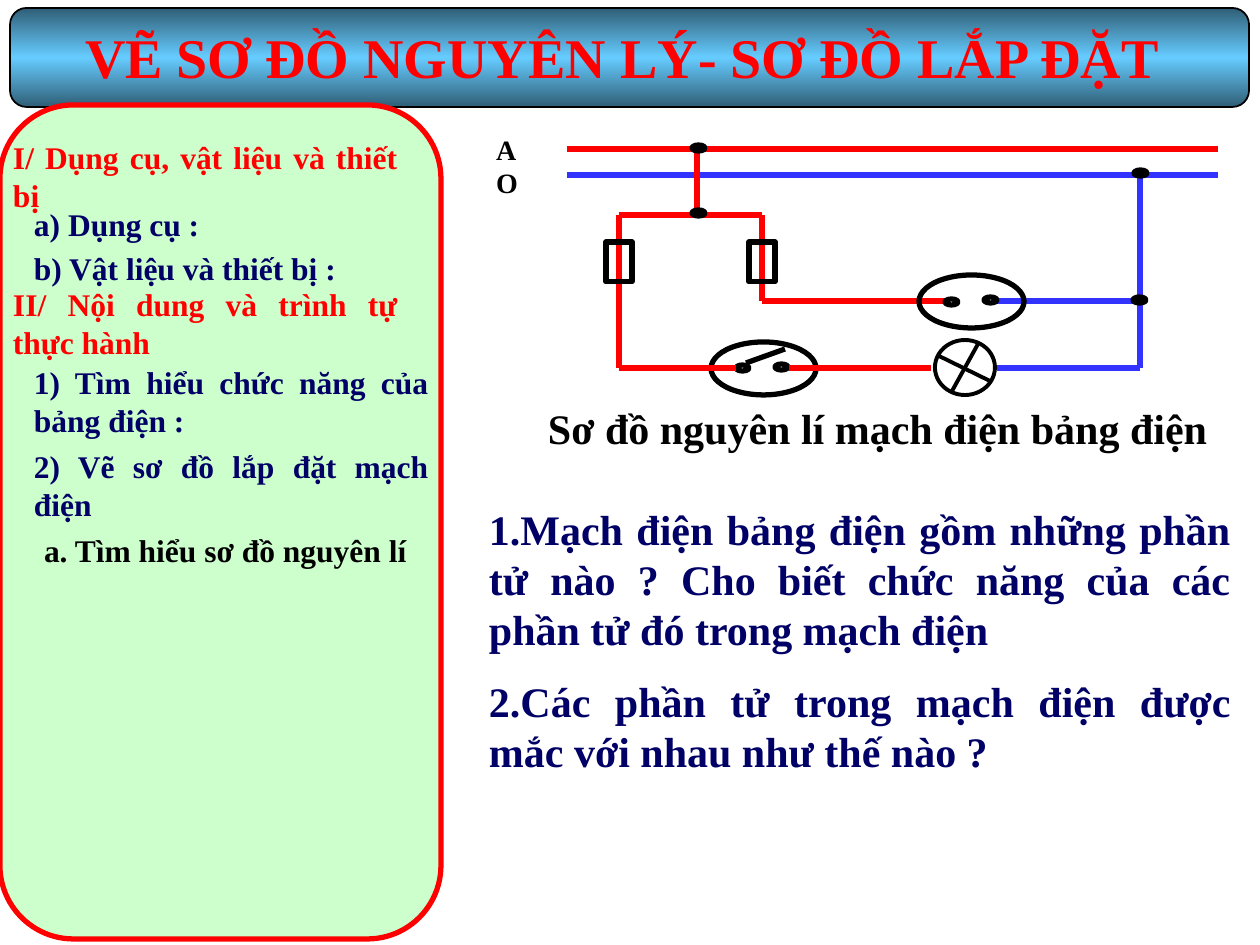
from copy import deepcopy
from typing import NamedTuple

from lxml import etree
from pptx import Presentation
from pptx.dml.color import RGBColor
from pptx.enum.shapes import MSO_CONNECTOR, MSO_SHAPE
from pptx.enum.text import PP_ALIGN
from pptx.oxml.ns import qn
from pptx.util import Pt

LINE = MSO_CONNECTOR.STRAIGHT
ROUND, RECT, OVAL = MSO_SHAPE.ROUNDED_RECTANGLE, MSO_SHAPE.RECTANGLE, MSO_SHAPE.OVAL
LEFT, JUSTIFY = PP_ALIGN.LEFT, PP_ALIGN.JUSTIFY
SCALE = 914400 / 126
COLORS = {
    "red": "FF0000", "blue": "3333FF", "navy": "000066", "black": "000000",
    "white": "FFFFFF", "mint": "CCFFCC", "steel": "2F5E76", "sky": "66CCFF",
}
FONT = {"name": "Times New Roman", "bold": True}
FRAME = {"word_wrap": True}


class Wire(NamedTuple):
    x1: int
    y1: int
    x2: int
    y2: int
    color: str = "red"
    width: float = 3


class Mark(NamedTuple):
    kind: int
    x: int
    y: int
    w: int
    h: int
    fill: str = ""
    color: str = "black"
    width: float = 3


class Label(NamedTuple):
    x: int
    y: int
    w: int
    h: int
    lines: tuple
    size: int = 18
    color: str = "navy"
    align: int = JUSTIFY
    gap: int = 0
    inset: int = 13


def px(n: int) -> int:
    """Turn px into EMU."""
    return round(n * SCALE)


def rgb(name: str) -> RGBColor:
    """Look up a named colour."""
    return RGBColor.from_string(COLORS[name])


def set_all(target, values: dict) -> None:
    """Set attributes from a dict."""
    for key, value in values.items():
        setattr(target, key, value)


def draw_wire(s, wire: Wire) -> None:
    """Draw a straight line."""
    c = s.shapes.add_connector(LINE, px(wire.x1), px(wire.y1), px(wire.x2), px(wire.y2))
    c.line.color.rgb = rgb(wire.color)
    c.line.width = Pt(wire.width)
    etree.SubElement(c.line._get_or_add_ln().getparent(), qn("a:effectLst"))


def draw_mark(s, mark: Mark):
    """Draw an outlined preset shape."""
    sp = s.shapes.add_shape(mark.kind, px(mark.x), px(mark.y), px(mark.w), px(mark.h))
    sp.shadow.inherit = False
    if mark.fill:
        sp.fill.solid()
        sp.fill.fore_color.rgb = rgb(mark.fill)
    else:
        sp.fill.background()
    sp.line.color.rgb = rgb(mark.color)
    sp.line.width = Pt(mark.width)
    return sp


def draw_label(s, label: Label) -> None:
    """Draw a text box with one paragraph per line."""
    tf = s.shapes.add_textbox(px(label.x), px(label.y), px(label.w), px(label.h)).text_frame
    set_all(tf, FRAME | {"margin_left": px(label.inset)})
    for i, line in enumerate(label.lines):
        p = tf.add_paragraph() if i else tf.paragraphs[0]
        set_all(p, {"alignment": label.align, "space_before": Pt(label.gap if i else 0)})
        r = p.add_run()
        r.text = line
        set_all(r.font, FONT | {"size": Pt(label.size)})
        r.font.color.rgb = rgb(label.color)


def draw_banner(s, mark: Mark) -> None:
    """Draw the title bar with its three-stop gradient."""
    fill = draw_mark(s, mark).fill
    fill.gradient()
    fill.gradient_angle = 90
    last = fill.gradient_stops[1].color._xFill
    last.addnext(deepcopy(last))
    for stop, (pos, name) in zip(fill.gradient_stops, ((0, "steel"), (0.5, "sky"), (1, "steel"))):
        stop.position = pos
        stop.color.rgb = rgb(name)


def contact(x: int, y: int, fill: str = "") -> Mark:
    """Describe a terminal, or a junction when filled."""
    return Mark(OVAL, x, y, 13, 6, fill)


def ring(x: int, y: int) -> Mark:
    """Describe the housing of a switch or socket."""
    return Mark(OVAL, x, y, 105, 53)


BANNER = Mark(ROUND, 10, 8, 1239, 99, "sky", width=1)
PANEL = Mark(ROUND, 0, 105, 441, 834, "mint", "red")
CIRCUIT = [
    Mark(OVAL, 935, 340, 60, 55, "white", width=2.25),
    Wire(937, 355, 992, 382, "black", 2.25),
    Wire(978, 344, 951, 393, "black", 2.25),
    Wire(567, 149, 1218, 149),
    Wire(567, 175, 1218, 175, "blue"),
    Wire(697, 149, 697, 215),
    Wire(619, 215, 762, 215),
    Wire(619, 215, 619, 368),
    Wire(762, 215, 762, 301),
    *(Mark(RECT, x - 13, 242, 26, 40) for x in (619, 762)),
    Wire(762, 301, 945, 301),
    Wire(997, 301, 1140, 301, "blue"),
    Wire(1140, 368, 1140, 175, "blue"),
    contact(945, 299), contact(984, 297), ring(919, 275),
    contact(736, 365), contact(775, 364), ring(711, 342),
    Wire(619, 368, 736, 368),
    Wire(789, 368, 931, 368),
    Wire(997, 368, 1140, 368, "blue"),
    *(contact(x, y, "black") for x, y in ((692, 210), (692, 145), (1133, 297), (1134, 170))),
    Wire(746, 363, 785, 349, "black"),
]
LABELS = [
    Label(0, 132, 410, 88, ("I/ Dụng cụ, vật liệu và thiết bị",), color="red"),
    Label(21, 199, 273, 50, ("a) Dụng cụ :",), align=LEFT),
    Label(21, 243, 336, 50, ("b) Vật liệu và thiết bị :",), align=LEFT),
    Label(0, 279, 410, 88, ("II/ Nội dung và trình tự thực hành",), color="red"),
    Label(21, 357, 420, 88, ("1) Tìm hiểu chức năng của bảng điện :",)),
    Label(21, 441, 420, 88, ("2) Vẽ sơ đồ lắp đặt mạch điện",)),
    Label(31, 525, 420, 50, ("a. Tìm hiểu sơ đồ nguyên lí",), color="black"),
    Label(476, 497, 767, 290, (
        "1.Mạch điện bảng điện gồm những phần tử nào ? Cho biết chức năng của các "
        "phần tử đó trong mạch điện",
        "2.Các phần tử trong mạch điện được mắc với nhau như thế nào ?",
    ), 24, gap=12),
    Label(483, 126, 68, 80, ("A", "O"), 16, "black", LEFT),
    Label(535, 396, 693, 63, ("Sơ đồ nguyên lí mạch điện bảng điện",), 24, "black", LEFT),
    Label(31, 16, 1239, 80, ("VẼ SƠ ĐỒ NGUYÊN LÝ- SƠ ĐỒ LẮP ĐẶT",), 32, "red", inset=54),
]


def main() -> None:
    """Build and save the slide."""
    prs = Presentation()
    set_all(prs, {"slide_width": px(1260), "slide_height": px(945)})
    s = prs.slides.add_slide(prs.slide_layouts[6])
    draw_banner(s, BANNER)
    draw_mark(s, PANEL)
    for part in CIRCUIT:
        (draw_wire if isinstance(part, Wire) else draw_mark)(s, part)
    for label in LABELS:
        draw_label(s, label)
    prs.save("out.pptx")


if __name__ == "__main__":
    main()
